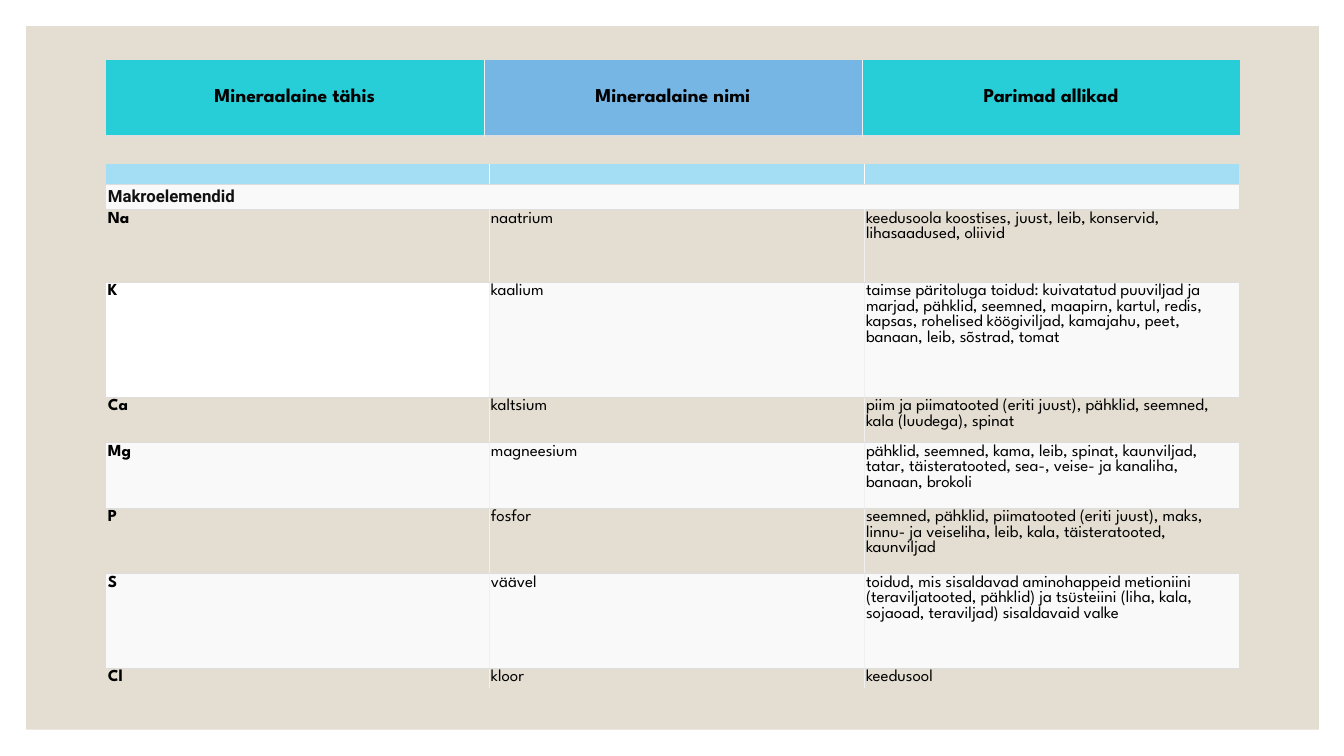
import pptx
import pptx.util
import pptx.dml.color
import pptx.enum.shapes
import pptx.enum.text
import pptx.oxml.ns
import lxml.etree

Inches = pptx.util.Inches
Pt = pptx.util.Pt

COLORS = {
    "sand": "E3DED1", "turquoise": "27CED7", "blue": "75B6E5", "sky": "A4DEF4",
    "pale": "F9F9F9", "white": "FFFFFF", "black": "000000", "ink": "111111",
    "column_line": "F0F0F0", "row_line": "DDDDDD",
}
HEADINGS = [
    ("Mineraalaine tähis", "turquoise"),
    ("Mineraalaine nimi", "blue"),
    ("Parimad allikad", "turquoise"),
]
MINERALS = [
    ("Na", "naatrium", "keedusoola koostises, juust, leib, konservid, lihasaadused, oliivid", 0.72),
    ("K", "kaalium", "taimse päritoluga toidud: kuivatatud puuviljad ja marjad, pähklid, seemned, "
     "maapirn, kartul, redis, kapsas, rohelised köögiviljad, kamajahu, peet, banaan, leib, "
     "sõstrad, tomat", 1.14),
    ("Ca", "kaltsium", "piim ja piimatooted (eriti juust), pähklid, seemned, kala (luudega), spinat", 0.45),
    ("Mg", "magneesium", "pähklid, seemned, kama, leib, spinat, kaunviljad, tatar, täisteratooted, "
     "sea-, veise- ja kanaliha, banaan, brokoli", 0.65),
    ("P", "fosfor", "seemned, pähklid, piimatooted (eriti juust), maks, linnu- ja veiseliha, leib, "
     "kala, täisteratooted, kaunviljad", 0.65),
    ("S", "väävel", "toidud, mis sisaldavad aminohappeid metioniini (teraviljatooted, pähklid) ja "
     "tsüsteiini (liha, kala, sojaoad, teraviljad) sisaldavaid valke", 0.94),
    ("Cl", "kloor", "keedusool", 0.15),
]


class SlideBuilder:
    """Holds the slide, its colours and its font, and draws each kind of element."""

    def __init__(self, prs):
        self.slide = prs.slides.add_slide(prs.slide_layouts[6])
        self.font = "League Spartan"

    def rgb(self, color):
        return pptx.dml.color.RGBColor.from_string(COLORS[color])

    def panel(self, x, y, w, h, color):
        sp = self.slide.shapes.add_shape(
            pptx.enum.shapes.MSO_SHAPE.RECTANGLE, Inches(x), Inches(y), Inches(w), Inches(h))
        sp.shadow.inherit = False
        sp.fill.solid()
        sp.fill.fore_color.rgb = self.rgb(color)
        sp.line.fill.background()

    def table(self, x, y, widths, heights):
        frame = self.slide.shapes.add_table(
            len(heights), len(widths), Inches(x), Inches(y),
            Inches(sum(widths)), Inches(sum(heights)))
        table = frame.table
        table.first_row = table.horz_banding = False
        for column, width in zip(table.columns, widths):
            column.width = Inches(width)
        for row, height in zip(table.rows, heights):
            row.height = Inches(height)
        return table

    def cell(self, cell, text, fill=None, size=12, bold=False, color="black",
             font=None, inset=0.02, centered=False):
        cell.margin_left = cell.margin_right = Inches(inset)
        cell.margin_top = cell.margin_bottom = Inches(inset)
        if fill:
            cell.fill.solid()
            cell.fill.fore_color.rgb = self.rgb(fill)
        else:
            cell.fill.background()
        p = cell.text_frame.paragraphs[0]
        if text:
            p.text = text
        p.font.name = font or self.font
        p.font.size = Pt(size)
        p.font.bold = bold
        p.font.color.rgb = self.rgb(color)
        if centered:
            p.alignment = pptx.enum.text.PP_ALIGN.CENTER
            cell.vertical_anchor = pptx.enum.text.MSO_ANCHOR.MIDDLE

    def borders(self, cell, **lines):
        qn = pptx.oxml.ns.qn
        tc_pr = cell._tc.get_or_add_tcPr()
        for i, side in enumerate("LRTB"):
            color, width = lines.get(side) or (None, 0.75)
            ln = lxml.etree.Element(qn(f"a:ln{side}"), w=str(Pt(width)))
            if color:
                fill = lxml.etree.SubElement(ln, qn("a:solidFill"))
                lxml.etree.SubElement(fill, qn("a:srgbClr"), val=COLORS[color])
            else:
                lxml.etree.SubElement(ln, qn("a:noFill"))
            tc_pr.insert(i, ln)

    def grid(self, table, row, column_line="column_line", top=None, bottom=None):
        last = len(table.columns) - 1
        line = (column_line, 0.75) if column_line else None
        for c in range(last + 1):
            self.borders(table.cell(row, c), L=line if c else None,
                         R=line if c < last else None, T=top, B=bottom)


def main():
    prs = pptx.Presentation()
    prs.slide_width, prs.slide_height = Inches(13.33), Inches(7.5)
    s = SlideBuilder(prs)
    s.panel(0.26, 0.26, 12.82, 6.98, "sand")

    header = s.table(1.05, 0.6, [3.75] * 3, [0.75])
    for c, (text, fill) in enumerate(HEADINGS):
        s.cell(header.cell(0, c), text, fill, 14, True, inset=0.08, centered=True)
    s.grid(header, 0, bottom=("row_line", 1.5))

    line = ("row_line", 0.75)
    heights = [0.2, 0.25] + [mineral[-1] for mineral in MINERALS]
    table = s.table(1.05, 1.63, [3.8, 3.72, 3.72], heights)
    for c in range(3):
        s.cell(table.cell(0, c), "", "sky")
    s.grid(table, 0, "white", bottom=line)

    group = table.cell(1, 0)
    group.merge(table.cell(1, 2))
    s.cell(group, "Makroelemendid", "pale", bold=True, color="ink", font="Roboto")
    s.grid(table, 1, None, line, line)

    for r, (symbol, name, sources, _) in enumerate(MINERALS, start=2):
        band = "pale" if r % 2 else None
        for c, text in enumerate((symbol, name, sources)):
            fill = "white" if text == "K" else band
            s.cell(table.cell(r, c), text, fill, bold=c == 0)
        s.grid(table, r, top=line, bottom=line if text != "keedusool" else None)

    prs.save("out.pptx")


if __name__ == "__main__":
    main()
